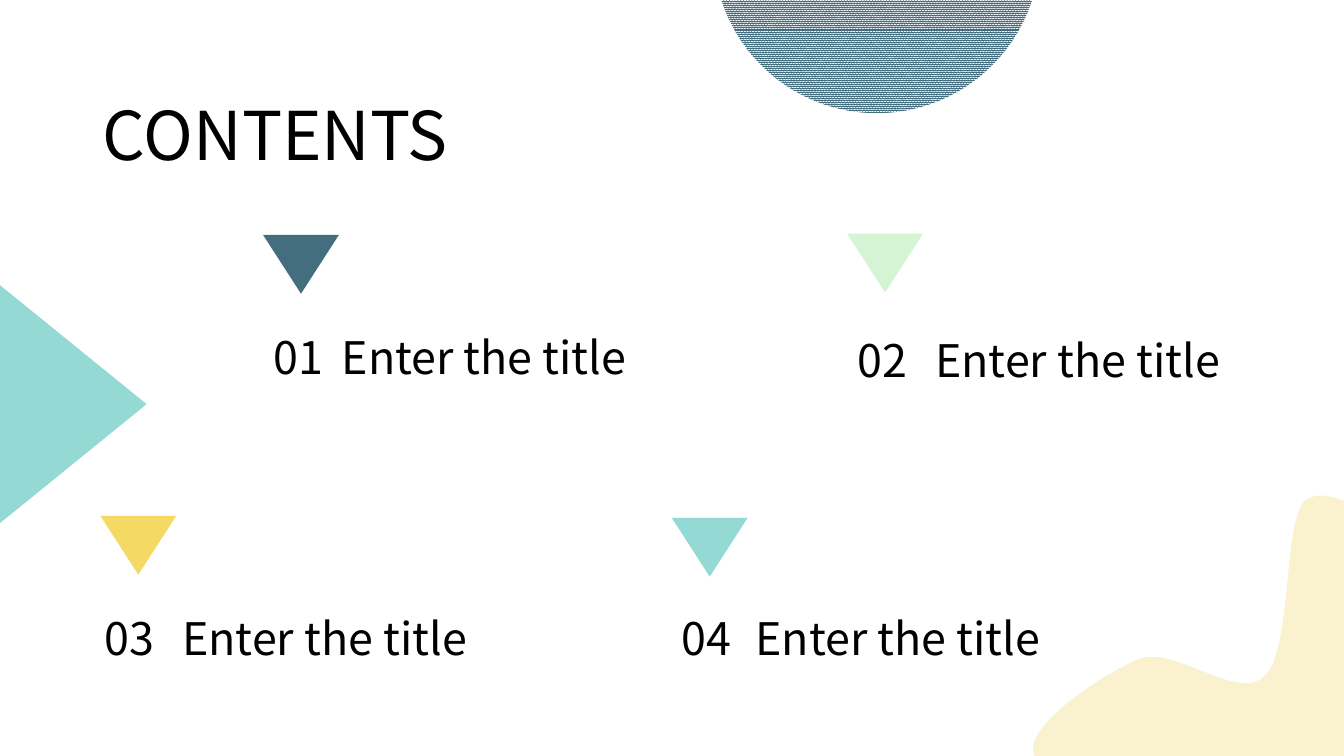
from lxml import etree
from pptx import Presentation
from pptx import util as u
from pptx.dml.color import RGBColor
from pptx.enum import dml, shapes, text
from pptx.oxml import ns

FONT = "Noto Sans CJK SC"
BLACK = RGBColor(0x00, 0x00, 0x00)
WHITE = RGBColor(0xFF, 0xFF, 0xFF)
NAVY = RGBColor(0x44, 0x6E, 0x7E)
MINT = RGBColor(0xD5, 0xF4, 0xD3)
YELLOW = RGBColor(0xF4, 0xD9, 0x64)
TEAL = RGBColor(0x94, 0xD9, 0xD4)
CREAM = RGBColor(0xFA, 0xF1, 0xCE)

ITEMS = [
    ("01", NAVY, 6.63, 5.92, 6.65, 8.36, 8.18),
    ("02", MINT, 21.35, 5.89, 21.36, 23.32, 8.26),
    ("03", YELLOW, 2.53, 13, 2.39, 4.34, 15.27),
    ("04", TEAL, 16.93, 13.05, 16.92, 18.79, 15.27),
]
BLOB_START = (0.25, 6.78)
BLOB_CURVES = [
    ((-0.79, 6.12), (1.75, 4.49), (2.66, 4.11)),
    ((3.6, 3.76), (5.15, 5.2), (5.84, 4.54)),
    ((6.55, 3.88), (6.29, 0.56), (6.88, 0.1)),
    ((7.46, -0.33), (9.04, 0.56), (9.37, 1.88)),
    ((9.7, 3.22), (10.38, 7.24), (8.86, 8.07)),
    ((7.34, 8.89), (1.27, 7.44), BLOB_START),
]


def write(box, wording, size):
    """Put one left-aligned line of text into a box that grows to fit."""
    frame = box.text_frame
    frame.text = wording
    frame.word_wrap = True
    frame.auto_size = text.MSO_AUTO_SIZE.SHAPE_TO_FIT_TEXT
    frame.vertical_anchor = text.MSO_ANCHOR.TOP
    para = frame.paragraphs[0]
    para.alignment = text.PP_ALIGN.LEFT
    span = para.runs[0]
    span.font.name = FONT
    span.font.size = u.Pt(size)
    span.font.color.rgb = BLACK


def paint(shape, color):
    """Give a shape a flat fill without line or shadow."""
    shape.shadow.inherit = False
    shape.line.fill.background()
    shape.fill.solid()
    shape.fill.fore_color.rgb = color


def add_heading(page, left, top, width, height):
    """Place and format the slide title."""
    title = page.shapes.title
    title.left, title.top = u.Cm(left), u.Cm(top)
    title.width, title.height = u.Cm(width), u.Cm(height)
    write(title, "CONTENTS", 48)


def add_triangle(page, left, top, width, height, color, rotation):
    """Add a rotated triangle."""
    triangle = page.shapes.add_shape(
        shapes.MSO_SHAPE.ISOSCELES_TRIANGLE,
        u.Cm(left), u.Cm(top), u.Cm(width), u.Cm(height))
    triangle.rotation = rotation
    paint(triangle, color)


def add_item(page, number, color, left, top, number_left, title_left, text_top):
    """Add a contents entry: marker, number and title."""
    add_triangle(page, left, top, 1.91, 1.48, color, 180)
    for wording, start, width in (("Enter the title", title_left, 11.13),
                                  (number, number_left, 2.11)):
        box = page.shapes.add_textbox(
            u.Cm(start), u.Cm(text_top), u.Cm(width), u.Cm(1.63))
        write(box, wording, 32)


def add_step(outline, kind, points):
    """Append one drawing step with its points to an outline."""
    step = etree.SubElement(outline, ns.qn(kind))
    for x, y in points:
        etree.SubElement(step, ns.qn("a:pt"), x=str(u.Cm(x)), y=str(u.Cm(y)))


def add_blob(page, left, top, width, height):
    """Add the wavy corner shape, curved inside the given box."""
    right, bottom = u.Cm(left + width), u.Cm(top + height)
    builder = page.shapes.build_freeform(u.Cm(left), u.Cm(top))
    builder.add_line_segments([(right, u.Cm(top)), (right, bottom),
                               (u.Cm(left), bottom)])
    blob = builder.convert_to_shape()
    outline = next(blob.element.iter(ns.qn("a:path")))
    for step in list(outline):
        outline.remove(step)
    add_step(outline, "a:moveTo", [BLOB_START])
    for curve in BLOB_CURVES:
        add_step(outline, "a:cubicBezTo", curve)
    add_step(outline, "a:close", [])
    paint(blob, CREAM)


def add_circle(page, left, top, size):
    """Add the patterned circle cut by the top edge."""
    circle = page.shapes.add_shape(
        shapes.MSO_SHAPE.OVAL, u.Cm(left), u.Cm(top), u.Cm(size), u.Cm(size))
    paint(circle, NAVY)
    circle.fill.patterned()
    circle.fill.pattern = dml.MSO_PATTERN.PERCENT_90
    circle.fill.fore_color.rgb = NAVY
    circle.fill.back_color.rgb = WHITE


def build_contents(deck):
    """Build the contents slide."""
    page = deck.slides.add_slide(deck.slide_layouts[5])
    add_heading(page, 2.34, 2.23, 9.98, 2.31)
    for item in ITEMS:
        add_item(page, *item)
    add_blob(page, 26.03, 12.5, 9.8, 8.33)
    add_circle(page, 17.98, -5.38, 8.23)
    add_triangle(page, -1.17, 8.33, 6.02, 3.71, TEAL, 90)


def main():
    """Create the deck and save it."""
    deck = Presentation()
    deck.slide_width, deck.slide_height = u.Cm(33.87), u.Cm(19.05)
    build_contents(deck)
    deck.save("out.pptx")


if __name__ == "__main__":
    main()
